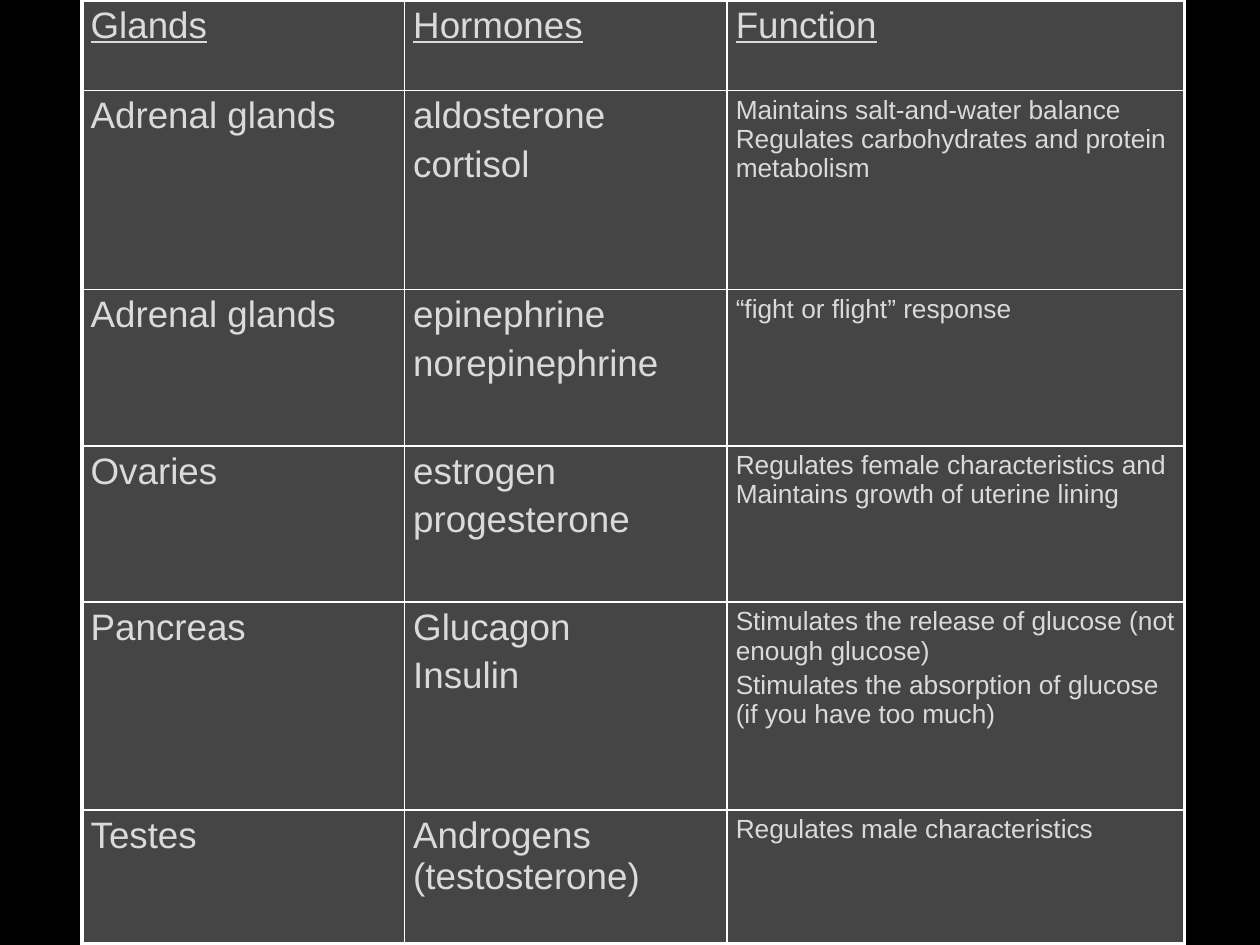
from lxml.etree import fromstring
from pptx import Presentation
from pptx.dml.color import RGBColor
from pptx.oxml.ns import nsdecls
from pptx.util import Inches, Pt

COLORS = {"background": "000000", "cell": "454545", "text": "DADADA", "border": "FFFFFF"}
COL_WIDTHS = [2.56, 2.56, 3.63]
ROW_HEIGHTS = [0.72, 1.58, 1.24, 1.24, 1.65, 1.06]
MARGINS = {"margin_left": 0.07, "margin_right": 0.07, "margin_top": 0.04, "margin_bottom": 0.04}
INNER, OUTER = 1, 2.25

# Each cell is a list of paragraphs
ROWS = [
    [["Glands"], ["Hormones"], ["Function"]],
    [["Adrenal glands"], ["aldosterone", "cortisol"],
     ["Maintains salt-and-water balance Regulates carbohydrates and protein metabolism"]],
    [["Adrenal glands"], ["epinephrine", "norepinephrine"], ["“fight or flight” response"]],
    [["Ovaries"], ["estrogen", "progesterone"],
     ["Regulates female characteristics and Maintains growth of uterine lining"]],
    [["Pancreas"], ["Glucagon", "Insulin"],
     ["Stimulates the release of glucose (not enough glucose)",
      "Stimulates the absorption of glucose (if you have too much)"]],
    [["Testes"], ["Androgens (testosterone)"], ["Regulates male characteristics"]],
]


def set_borders(cell, widths):
    """Draw the cell's sides; widths maps L, R, T, B to points, in schema order."""
    tc_pr = cell._tc.get_or_add_tcPr()
    for i, (side, width) in enumerate(widths.items()):
        tc_pr.insert(i, fromstring(
            f'<a:ln{side} {nsdecls("a")} w="{Pt(width)}"><a:solidFill>'
            f'<a:srgbClr val="{COLORS["border"]}"/></a:solidFill></a:ln{side}>'))


prs = Presentation()
prs.slide_width, prs.slide_height = Inches(10), Inches(7.5)
s = prs.slides.add_slide(prs.slide_layouts[6])
s.background.fill.solid()
s.background.fill.fore_color.rgb = RGBColor.from_string(COLORS["background"])

n_rows, n_cols = len(ROWS), len(COL_WIDTHS)
table = s.shapes.add_table(n_rows, n_cols, Inches(0.65), Inches(0),
                           Inches(sum(COL_WIDTHS)), Inches(7.5)).table
table.horz_banding = False
for column, width in zip(table.columns, COL_WIDTHS):
    column.width = Inches(width)
for row, height in zip(table.rows, ROW_HEIGHTS):
    row.height = Inches(height)

for r, row in enumerate(ROWS):
    for c, paragraphs in enumerate(row):
        cell = table.cell(r, c)
        cell.fill.solid()
        cell.fill.fore_color.rgb = RGBColor.from_string(COLORS["cell"])
        set_borders(cell, {
            "L": OUTER if c == 0 else INNER,
            "R": OUTER if c == n_cols - 1 else INNER,
            "T": OUTER if r == 0 else INNER,
            "B": OUTER if r == n_rows - 1 else INNER,
        })
        for name, margin in MARGINS.items():
            setattr(cell, name, Inches(margin))

        header = r == 0
        size = 15 if c == 2 and not header else 21
        font = {"name": "Arial", "size": Pt(size), "bold": False, "underline": header}
        tf = cell.text_frame
        for i, text in enumerate(paragraphs):
            p = tf.add_paragraph() if i else tf.paragraphs[0]
            p.space_before = Pt(0.2 * size if i else 0)
            run = p.add_run()
            run.text = text
            for name, value in font.items():
                setattr(run.font, name, value)
            run.font.color.rgb = RGBColor.from_string(COLORS["text"])

prs.save("out.pptx")
